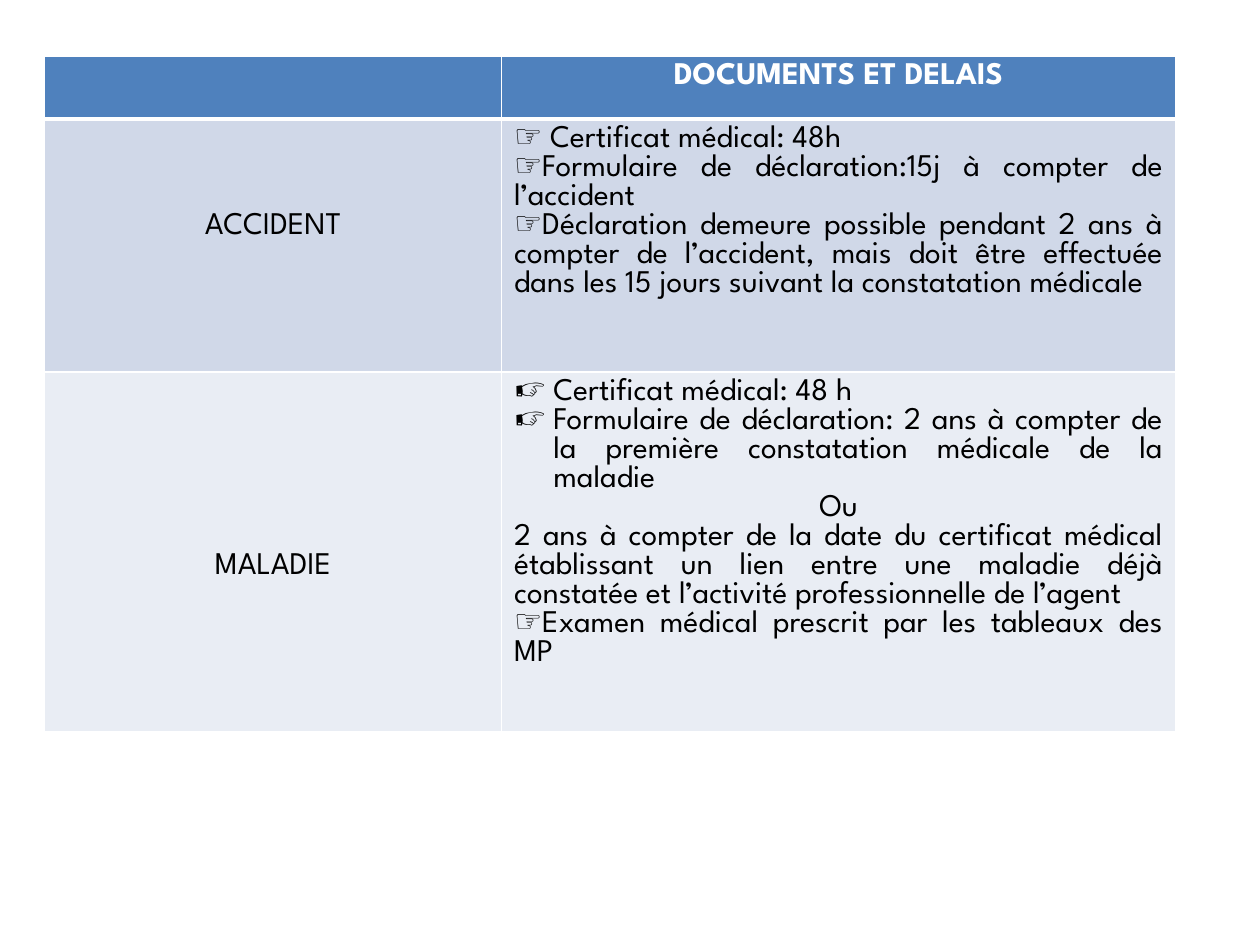
from lxml.etree import SubElement
from pptx import Presentation
from pptx.dml.color import RGBColor
from pptx.enum.text import PP_ALIGN
from pptx.oxml import parse_xml
from pptx.oxml.ns import nsdecls, qn
from pptx.util import Cm, Pt

FONT = "League Spartan"
WHITE, BLACK = "FFFFFF", "000000"
HEADER_FILL, ACCIDENT_FILL, ILLNESS_FILL = "4F81BD", "D0D8E8", "E9EDF4"
COLUMN_WIDTHS = (9.21, 13.59)
ROW_HEIGHTS = (1.26, 5.1, 7.26)
INDENT = 0.79

ACCIDENT_DOCUMENTS = [
    ("☞ Certificat médical: 48h", {}),
    ("☞Formulaire de déclaration:15j à compter de l’accident", {}),
    ("☞Déclaration demeure possible pendant 2 ans à compter de l’accident, "
     "mais doit être effectuée dans les 15 jours suivant la constatation médicale", {}),
]
ILLNESS_DOCUMENTS = [
    ("Certificat médical: 48 h", {"align": PP_ALIGN.LEFT, "bullet": "☞"}),
    ("Formulaire de déclaration: 2 ans à compter de la première constatation "
     "médicale de la maladie", {"bullet": "☞"}),
    ("Ou", {"align": PP_ALIGN.CENTER}),
    ("2 ans à compter de la date du certificat médical établissant un lien entre "
     "une maladie déjà constatée et l’activité professionnelle de l’agent", {}),
    ("☞Examen médical prescrit par les tableaux des MP", {}),
]


def color(hex_string):
    return RGBColor.from_string(hex_string)


def add_bullet(paragraph, character):
    properties = paragraph._p.get_or_add_pPr()
    properties.set("marL", str(Cm(INDENT)))
    properties.set("indent", str(-Cm(INDENT)))
    SubElement(properties, qn("a:buChar")).set("char", character)


def write(paragraph, text, align=PP_ALIGN.JUSTIFY, bold=False, font_color=BLACK, bullet=None):
    paragraph.alignment = align
    if bullet:
        add_bullet(paragraph, bullet)
    run = paragraph.add_run()
    run.text = text
    run.font.name = FONT
    run.font.size = Pt(18)
    run.font.bold = bold
    run.font.color.rgb = color(font_color)


def write_cell(cell, paragraphs):
    frame = cell.text_frame
    for index, (text, style) in enumerate(paragraphs):
        paragraph = frame.add_paragraph() if index else frame.paragraphs[0]
        write(paragraph, text, **style)


def write_label(cell, text, top):
    cell.margin_top = Cm(top)
    write_cell(cell, [(text, {"align": PP_ALIGN.CENTER})])


def style_cell(cell, fill, top=1, bottom=1):
    """Fill the cell and give it white borders, with top and bottom widths in points."""
    cell.fill.solid()
    cell.fill.fore_color.rgb = color(fill)
    properties = cell._tc.get_or_add_tcPr()
    widths = {"lnL": 1, "lnR": 1, "lnT": top, "lnB": bottom}
    for index, (side, width) in enumerate(widths.items()):
        properties.insert(index, parse_xml(
            f'<a:{side} {nsdecls("a")} w="{Pt(width)}"><a:solidFill>'
            f'<a:srgbClr val="{WHITE}"/></a:solidFill></a:{side}>'))


def add_deadline_table(slide):
    frame = slide.shapes.add_table(3, 2, Cm(0.9), Cm(1.14),
                                   Cm(sum(COLUMN_WIDTHS)), Cm(sum(ROW_HEIGHTS)))
    table = frame.table
    for column, width in zip(table.columns, COLUMN_WIDTHS):
        column.width = Cm(width)
    for row, height in zip(table.rows, ROW_HEIGHTS):
        row.height = Cm(height)
    row_styles = [
        {"fill": HEADER_FILL, "bottom": 3},
        {"fill": ACCIDENT_FILL, "top": 3},
        {"fill": ILLNESS_FILL},
    ]
    for row, style in zip(table.rows, row_styles):
        for cell in row.cells:
            style_cell(cell, **style)
    return table


def main():
    presentation = Presentation()
    presentation.slide_width, presentation.slide_height = Cm(25.4), Cm(19.05)
    slide = presentation.slides.add_slide(presentation.slide_layouts[6])

    table = add_deadline_table(slide)
    write_cell(table.cell(0, 1), [("DOCUMENTS ET DELAIS", {
        "align": PP_ALIGN.CENTER, "bold": True, "font_color": WHITE})])
    write_label(table.cell(1, 0), "ACCIDENT", top=1.88)
    write_cell(table.cell(1, 1), ACCIDENT_DOCUMENTS)
    write_label(table.cell(2, 0), "MALADIE", top=3.63)
    write_cell(table.cell(2, 1), ILLNESS_DOCUMENTS)

    presentation.save("out.pptx")


if __name__ == "__main__":
    main()
